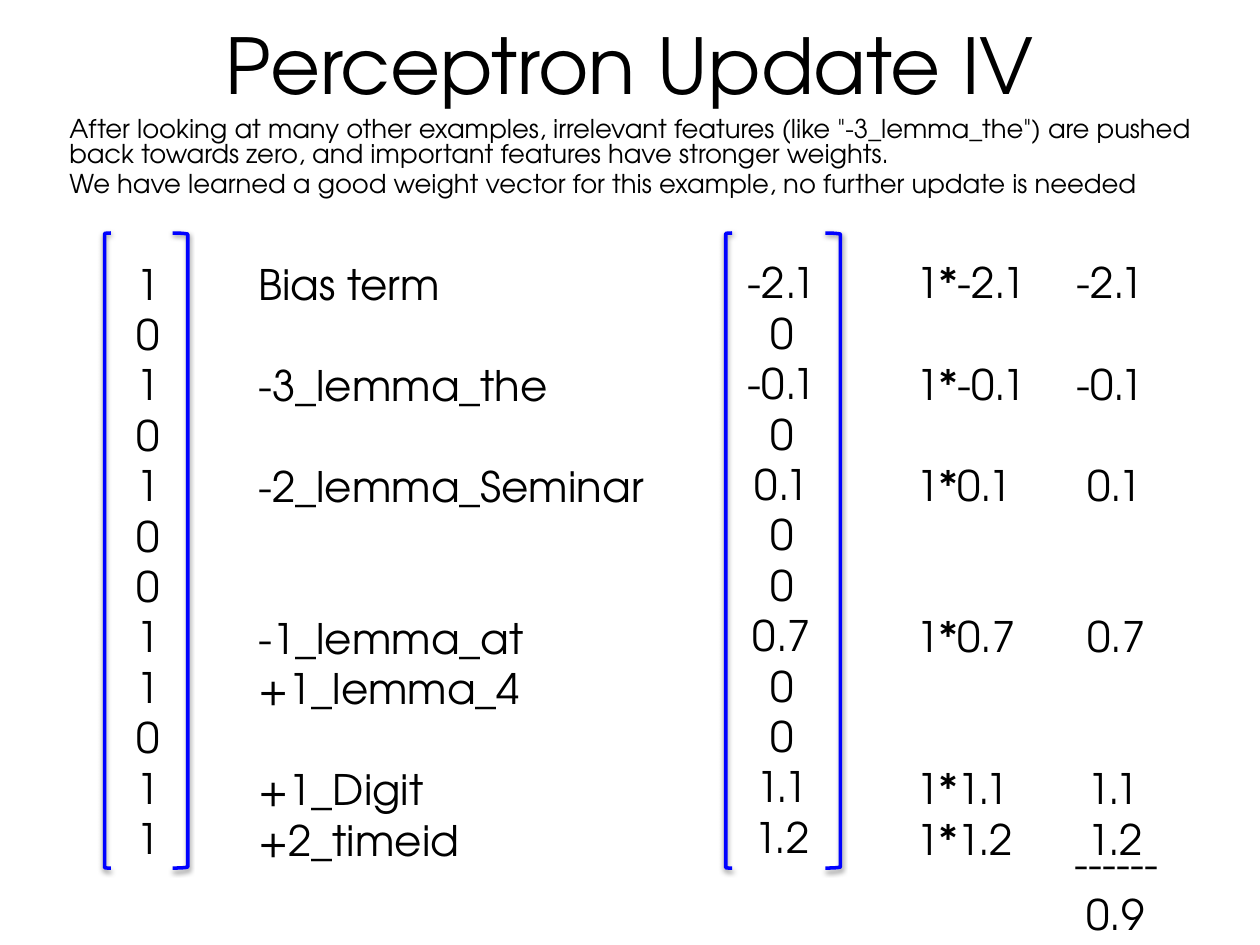
from dataclasses import dataclass, field
from typing import Any, NamedTuple

from lxml import etree
from pptx import Presentation
from pptx import util as u
from pptx.dml import color
from pptx.enum import shapes, text
from pptx.oxml import ns

CELL = 0.1
ROW_PITCH = 28.98
FONT = "TeX Gyre Adventor"
BLACK = "000000"
BLUE = "0001FF"
MINUS_INDENT = u.Inches(0.09)
CENTER = text.PP_ALIGN.CENTER
GROW = text.MSO_AUTO_SIZE.SHAPE_TO_FIT_TEXT
SHADOW = (
    f'<a:effectLst {ns.nsdecls("a")}>'
    '<a:outerShdw blurRad="38100" dist="20000" dir="5400000" rotWithShape="0">'
    f'<a:srgbClr val="{BLACK}"><a:alpha val="38000"/></a:srgbClr>'
    "</a:outerShdw></a:effectLst>"
)


class Area(NamedTuple):
    col: float
    row: float
    cols: float
    rows: float

    def lengths(self) -> list[int]:
        return [u.Inches(cells * CELL) for cells in self]


class Feature(NamedTuple):
    value: int
    name: str
    weight: str

    @property
    def active(self) -> bool:
        return self.value != 0 and self.weight != "0"


@dataclass
class Column:
    area: Area
    entries: list[str]
    size: float = 24
    indent_positive: bool = False
    frame: dict[str, Any] = field(default_factory=dict)
    paragraph: dict[str, Any] = field(default_factory=dict)


class Bracket(NamedTuple):
    preset: Any
    col: float
    cols: float


FEATURES = [
    Feature(1, "Bias term", "-2.1"),
    Feature(0, "", "0"),
    Feature(1, "-3_lemma_the", "-0.1"),
    Feature(0, "", "0"),
    Feature(1, "-2_lemma_Seminar", "0.1"),
    Feature(0, "", "0"),
    Feature(0, "", "0"),
    Feature(1, "-1_lemma_at", "0.7"),
    Feature(1, "+1_lemma_4", "0"),
    Feature(0, "", "0"),
    Feature(1, "+1_Digit", "1.1"),
    Feature(1, "+2_timeid", "1.2"),
]
EXPLANATION = [
    'After looking at many other examples, irrelevant features (like "-3_lemma_the") are '
    "pushed back towards zero, and important features have stronger weights.",
    "We have learned a good weight vector for this example, no further update is needed",
]
NARROW = {"word_wrap": False, "auto_size": GROW}
WIDE = {"word_wrap": True, "auto_size": GROW}
FIXED = {"word_wrap": True}

COLUMNS = [
    Column(Area(5, 0, 90, 10.1), ["Perceptron Update IV"], 44,
           frame=FIXED | {"vertical_anchor": text.MSO_ANCHOR.MIDDLE},
           paragraph={"alignment": CENTER}),
    Column(Area(5, 8.9, 90, 7.9), EXPLANATION, 14.8, frame=FIXED,
           paragraph={"line_spacing": 0.8, "space_before": u.Pt(3)}),
    Column(Area(10.3, 20, 3, 49.3), [str(f.value) for f in FEATURES], frame=NARROW),
    Column(Area(20, 20, 32.6, 49.3), [f.name for f in FEATURES], frame=WIDE),
    Column(Area(58.6, 19.9, 6.9, 49.3), [f.weight for f in FEATURES], frame=NARROW,
           paragraph={"alignment": CENTER}),
    Column(Area(72.2, 19.9, 10.1, 49.3),
           [f"{f.value}*{f.weight}" if f.active else "" for f in FEATURES], frame=NARROW),
    Column(Area(84.9, 19.9, 6.9, 49.3),
           [f.weight if f.active else "" for f in FEATURES],
           indent_positive=True, frame=NARROW),
    Column(Area(84.8, 66, 8.1, 9.1), ["------", "0.9"], indent_positive=True, frame=WIDE),
]
LEFT, RIGHT = shapes.MSO_SHAPE.LEFT_BRACKET, shapes.MSO_SHAPE.RIGHT_BRACKET
BRACKETS = [
    Bracket(LEFT, 8.3, 0.5),
    Bracket(RIGHT, 13.7, 1.2),
    Bracket(LEFT, 57.6, 0.5),
    Bracket(RIGHT, 65.5, 1.2),
]


def rgb(value: str) -> color.RGBColor:
    return color.RGBColor.from_string(value)


def apply(target: Any, values: dict[str, Any]) -> None:
    for name, value in values.items():
        setattr(target, name, value)


def draw_column(slide: Any, column: Column) -> None:
    frame = slide.shapes.add_textbox(*column.area.lengths()).text_frame
    margins = {f"margin_{side}": u.Inches(0.05) for side in ("left", "top", "right", "bottom")}
    apply(frame, margins | column.frame)
    skipped = 0
    for index, entry in enumerate(column.entries):
        if not entry:
            skipped += 1
            continue
        line = frame.add_paragraph() if index else frame.paragraphs[0]
        apply(line, column.paragraph)
        if skipped:
            line.space_before = u.Pt(skipped * ROW_PITCH)
            skipped = 0
        if column.indent_positive and not entry.startswith("-"):
            line._p.get_or_add_pPr().set("marL", str(MINUS_INDENT))
        run = line.add_run()
        run.text = entry
        apply(run.font, {"name": FONT, "size": u.Pt(column.size)})
        run.font.color.rgb = rgb(BLACK)


def draw_bracket(slide: Any, bracket: Bracket) -> None:
    area = Area(bracket.col, 18.5, bracket.cols, 50.4)
    outline = slide.shapes.add_shape(bracket.preset, *area.lengths())
    outline.fill.background()
    outline.line.color.rgb = rgb(BLUE)
    outline.line.width = u.Pt(2)
    outline._element.spPr.append(etree.fromstring(SHADOW))


def main() -> None:
    deck = Presentation()
    apply(deck, {"slide_width": u.Inches(10), "slide_height": u.Inches(7.5)})
    slide = deck.slides.add_slide(deck.slide_layouts[6])
    for bracket in BRACKETS:
        draw_bracket(slide, bracket)
    for column in COLUMNS:
        draw_column(slide, column)
    deck.save("out.pptx")


if __name__ == "__main__":
    main()
